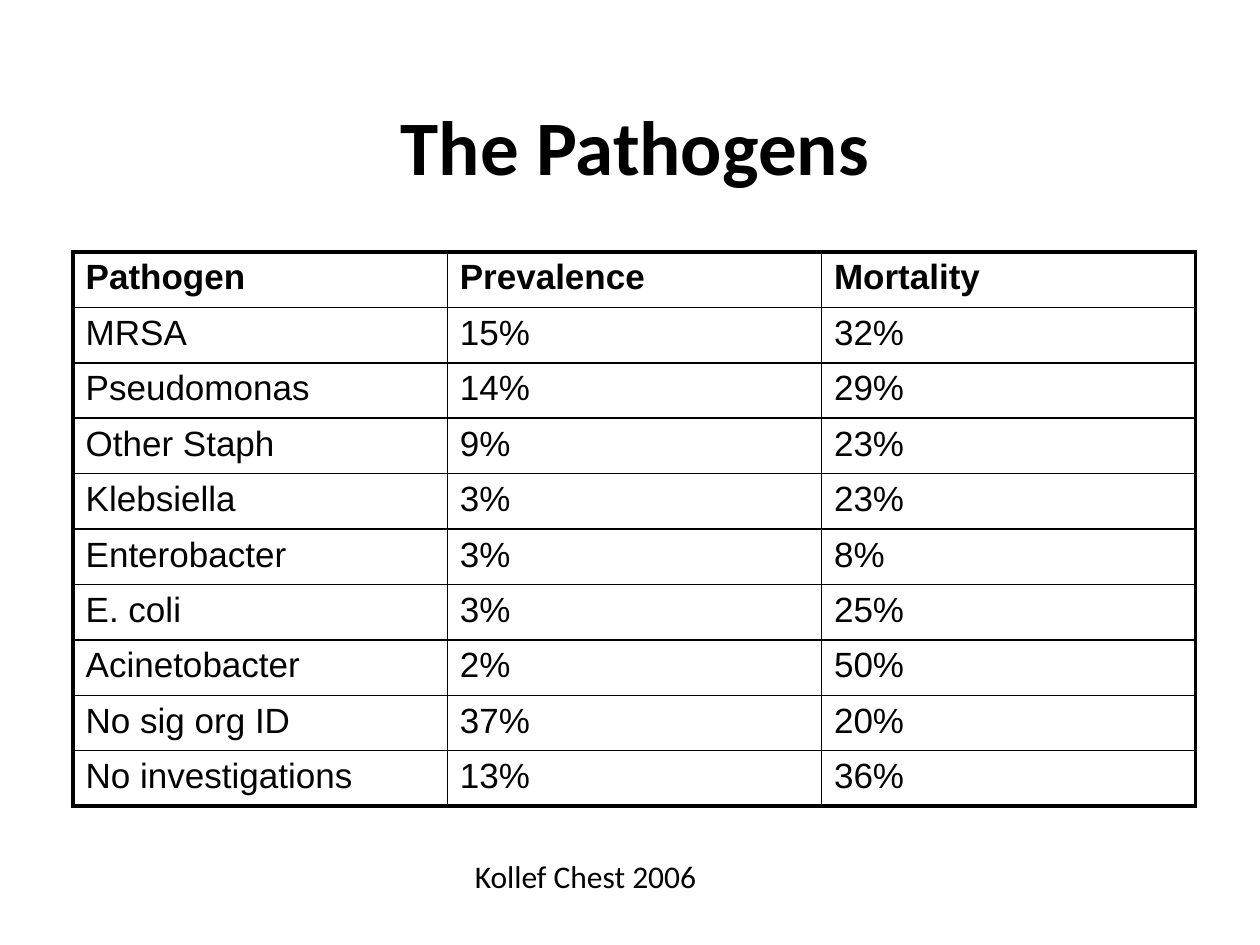
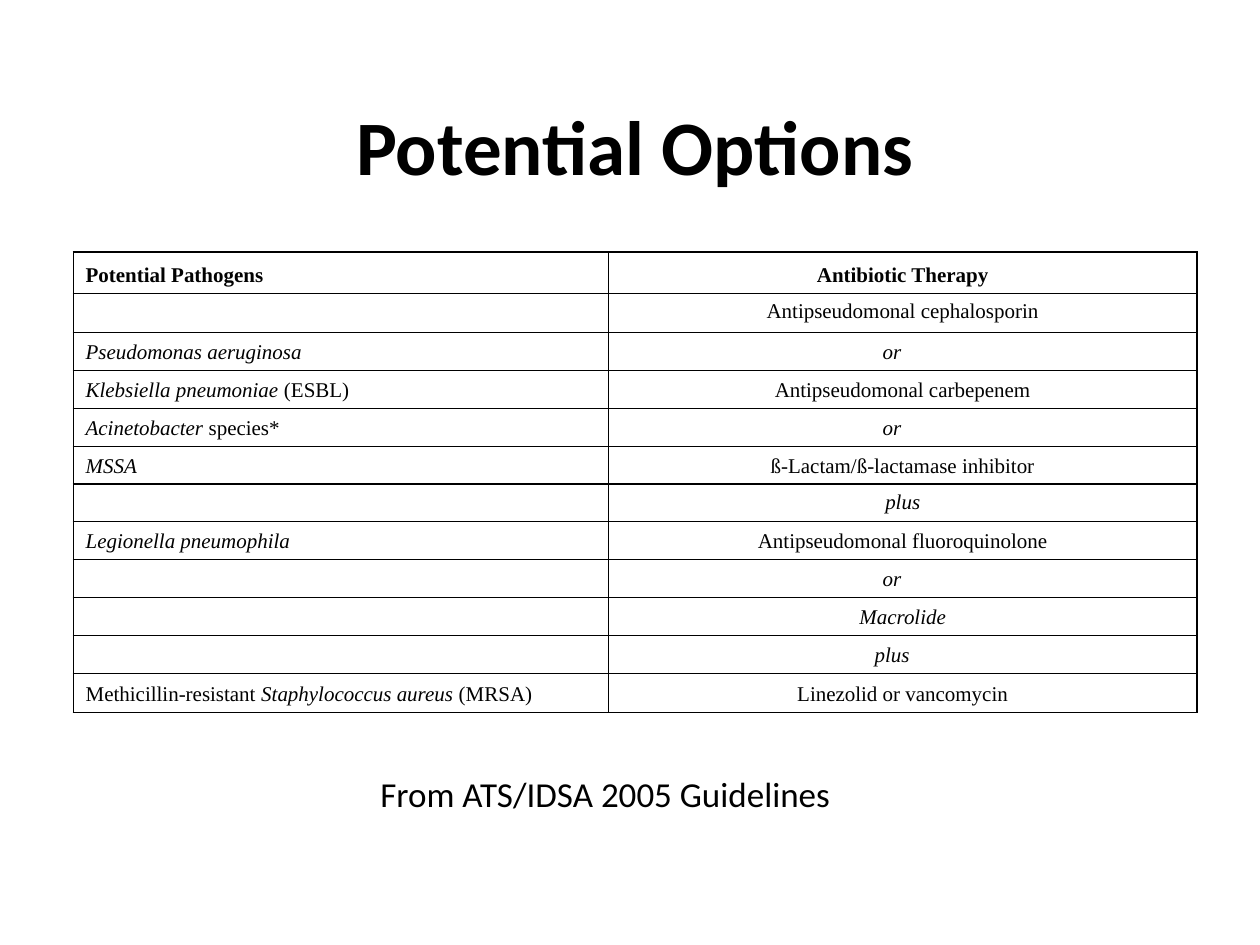
from lxml.etree import SubElement
from pptx import Presentation
from pptx.dml.color import RGBColor
from pptx.enum.text import MSO_ANCHOR, PP_ALIGN
from pptx.oxml.ns import qn
from pptx.util import Inches, Pt

BLACK, WHITE, CELL_TEXT = "000000", "FFFFFF", "020202"
TITLE_BOX = (0.58, 0.52, 8.92, 1.25)
TABLE_LEFT, TABLE_TOP = 0.58, 2

PATHOGENS = [
    ("Pathogen", "Prevalence", "Mortality"),
    ("MRSA", "15%", "32%"),
    ("Pseudomonas", "14%", "29%"),
    ("Other Staph", "9%", "23%"),
    ("Klebsiella", "3%", "23%"),
    ("Enterobacter", "3%", "8%"),
    ("E. coli", "3%", "25%"),
    ("Acinetobacter", "2%", "50%"),
    ("No sig org ID", "37%", "20%"),
    ("No investigations", "13%", "36%"),
]

# Underscores enclose italic words
OPTIONS = [
    ("Potential Pathogens", "Antibiotic Therapy"),
    ("", "Antipseudomonal cephalosporin"),
    ("_Pseudomonas aeruginosa_", "_or_"),
    ("_Klebsiella pneumoniae_ (ESBL)", "Antipseudomonal carbepenem"),
    ("_Acinetobacter_ species*", "_or_"),
    ("_MSSA_", "ß-Lactam/ß-lactamase inhibitor"),
    ("", "_plus_"),
    ("_Legionella pneumophila_", "Antipseudomonal fluoroquinolone"),
    ("", "_or_"),
    ("", "_Macrolide_"),
    ("", "_plus_"),
    ("Methicillin-resistant _Staphylococcus aureus_ (MRSA)", "Linezolid or vancomycin"),
]
OPTION_HEIGHTS = [0.33, 0.31, 0.28, 0.28, 0.28, 0.3, 0.28, 0.28, 0.3, 0.3, 0.3, 0.31]
TOP_ROWS = (1, 6)              # rows whose text sits at the top
SHIFTED_ROWS = (2, 4, 8, 10)   # joining words set slightly left of centre


def rgb(hex_color):
    return RGBColor.from_string(hex_color)


def add_run(p, text, size, font, color=BLACK, bold=False, italic=False):
    r = p.add_run()
    r.text = text
    r.font.size, r.font.name = Pt(size), font
    r.font.bold, r.font.italic = bold, italic
    r.font.color.rgb = rgb(color)


def add_text(s, box, text, size, bold=False, align=PP_ALIGN.LEFT, anchor=MSO_ANCHOR.TOP):
    tf = s.shapes.add_textbox(*map(Inches, box)).text_frame
    tf.word_wrap = True
    tf.vertical_anchor = anchor
    p = tf.paragraphs[0]
    p.alignment = align
    add_run(p, text, size, "Calibri", bold=bold)


def add_title(s, text):
    add_text(s, TITLE_BOX, text, 44, True, PP_ALIGN.CENTER, MSO_ANCHOR.MIDDLE)


def set_borders(cell, widths):
    """Widths are for the left, right, top and bottom edges."""
    tcPr = cell._tc.get_or_add_tcPr()
    for side, width in zip("LRTB", widths):
        ln = SubElement(tcPr, qn(f"a:ln{side}"), w=str(Pt(width)))
        SubElement(SubElement(ln, qn("a:solidFill")), qn("a:srgbClr"), val=BLACK)


def fill_cell(cell, text, size, font, bold):
    p = cell.text_frame.paragraphs[0]
    for i, part in enumerate(text.split("_")):
        if part:
            add_run(p, part, size, font, CELL_TEXT, bold, i % 2 == 1)
    if not text:
        SubElement(p._p, qn("a:endParaRPr"), sz=str(size * 100))


def add_grid(s, rows, widths, heights, size, font, inner, outer):
    last_row, last_col = len(rows) - 1, len(widths) - 1
    box = (TABLE_LEFT, TABLE_TOP, sum(widths), sum(heights))
    table = s.shapes.add_table(len(rows), len(widths), *map(Inches, box)).table
    for column, width in zip(table.columns, widths):
        column.width = Inches(width)
    for i, (row, height) in enumerate(zip(rows, heights)):
        table.rows[i].height = Inches(height)
        for j, text in enumerate(row):
            cell = table.cell(i, j)
            fill_cell(cell, text, size, font, bold=i == 0)
            edges = (j == 0, j == last_col, i == 0, i == last_row)
            set_borders(cell, [outer if edge else inner for edge in edges])
            cell.fill.solid()
            cell.fill.fore_color.rgb = rgb(WHITE)
    return table


def pathogens_slide(s):
    add_title(s, "The Pathogens")
    add_grid(s, PATHOGENS, [2.97] * 3, [0.44] * len(PATHOGENS), 20, "Arial", 1, 2.25)
    add_text(s, (3.67, 6.75, 3, 0.5), "Kollef Chest 2006", 18)


def options_slide(s):
    add_title(s, "Potential Options")
    table = add_grid(s, OPTIONS, [4.25, 4.67], OPTION_HEIGHTS, 12, "Times New Roman", 0.75, 0.75)
    # Therapies are centred; text sits at the foot of most rows
    for i in range(len(OPTIONS)):
        pathogen, therapy = table.cell(i, 0), table.cell(i, 1)
        therapy.text_frame.paragraphs[0].alignment = PP_ALIGN.CENTER
        for cell in (pathogen, therapy):
            cell.vertical_anchor = MSO_ANCHOR.TOP if i in TOP_ROWS else MSO_ANCHOR.BOTTOM
        if i in SHIFTED_ROWS:
            therapy.margin_right = Inches(0.27)
    add_text(s, (2.92, 6.08, 4.58, 0.43), "From ATS/IDSA 2005 Guidelines", 20)


def main():
    prs = Presentation()
    prs.slide_width, prs.slide_height = Inches(10), Inches(7.5)
    for build in (pathogens_slide, options_slide):
        build(prs.slides.add_slide(prs.slide_layouts[6]))
    prs.save("out.pptx")


if __name__ == "__main__":
    main()
